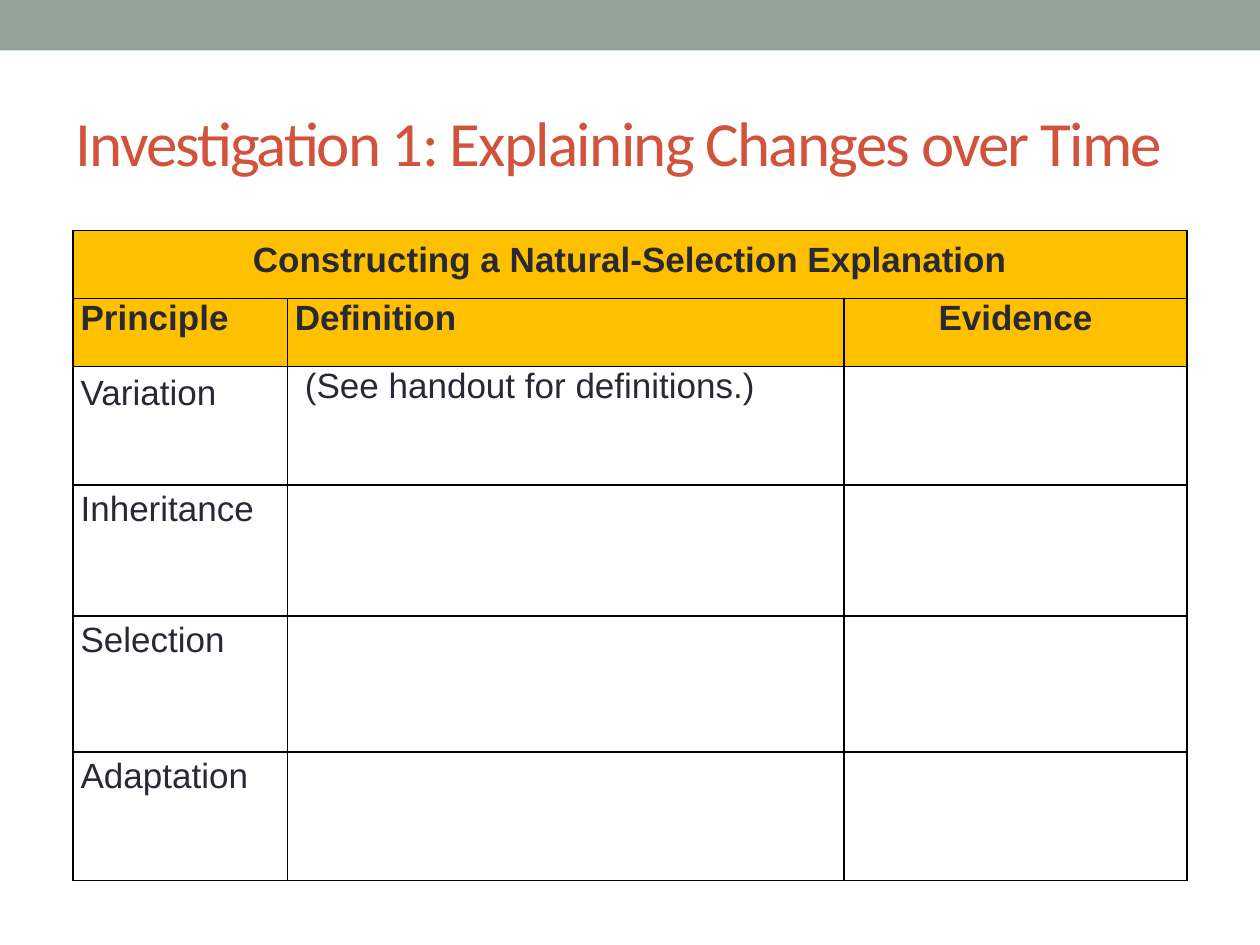
import pptx
import pptx.dml.color
import pptx.enum.shapes
import pptx.enum.text
import pptx.oxml
import pptx.oxml.ns
import pptx.util

Inches = pptx.util.Inches
Pt = pptx.util.Pt
RGBColor = pptx.dml.color.RGBColor
ALIGN = pptx.enum.text.PP_ALIGN
ANCHOR = pptx.enum.text.MSO_ANCHOR

THEME = {
    "band": RGBColor.from_string("93A299"),
    "title": RGBColor.from_string("D2533C"),
    "text": RGBColor.from_string("292934"),
    "header": RGBColor.from_string("FFC000"),
    "body": RGBColor.from_string("FFFFFF"),
    "border": "000000",
    "title_font": "Calibri",
    "table_font": "Arial",
    "title_size": Pt(36),
    "table_size": Pt(20),
}


def set_borders(cell):
    properties = cell._tc.get_or_add_tcPr()
    for position, side in enumerate(("lnL", "lnR", "lnT", "lnB")):
        line = pptx.oxml.parse_xml(
            f'<a:{side} {pptx.oxml.ns.nsdecls("a")} w="{Pt(1)}"><a:solidFill>'
            f'<a:srgbClr val="{THEME["border"]}"/></a:solidFill></a:{side}>'
        )
        properties.insert(position, line)


def set_text(paragraph, text, alignment, **font_values):
    paragraph.alignment = alignment
    run = paragraph.add_run()
    run.text = text
    run.font.color.rgb = font_values.pop("color")
    for name, value in font_values.items():
        setattr(run.font, name, value)
    return run


presentation = pptx.Presentation()
presentation.slide_width = Inches(10)
presentation.slide_height = Inches(7.5)
slide = presentation.slides.add_slide(presentation.slide_layouts[5])

# Title
title = slide.shapes.title
title.left, title.top = Inches(0.5), Inches(0.58)
title.width, title.height = Inches(9), Inches(1.08)
title.text_frame.vertical_anchor = ANCHOR.MIDDLE
title_run = set_text(
    title.text_frame.paragraphs[0],
    "Investigation 1: Explaining Changes over Time",
    ALIGN.LEFT,
    name=THEME["title_font"],
    size=THEME["title_size"],
    color=THEME["title"],
)
title_run._r.get_or_add_rPr().set("spc", "-100")

# Band along the top
band = slide.shapes.add_shape(
    pptx.enum.shapes.MSO_SHAPE.RECTANGLE, 0, 0, Inches(10), Inches(0.4)
)
band.shadow.inherit = False
band.fill.solid()
band.fill.fore_color.rgb = THEME["band"]
band.line.fill.background()

# Table
ROWS = [
    ["Constructing a Natural-Selection Explanation", "", ""],
    ["Principle", "Definition", "Evidence"],
    ["Variation", "(See handout for definitions.)", ""],
    ["Inheritance", "", ""],
    ["Selection", "", ""],
    ["Adaptation", "", ""],
]
COLUMN_WIDTHS = [1.7, 4.42, 2.72]
ROW_HEIGHTS = [0.54, 0.54, 0.94, 1.04, 1.08, 1.02]
FIRST_COLUMN_TOP_MARGINS = [0.08, 0, 0.06, 0.04, 0.04, 0.04]
HEADER_ROWS = 2
CENTERED = {(0, 0), (1, 2)}
INDENTED = (2, 1)

table = slide.shapes.add_table(
    len(ROWS), len(COLUMN_WIDTHS), Inches(0.58), Inches(1.83),
    Inches(sum(COLUMN_WIDTHS)), Inches(sum(ROW_HEIGHTS)),
).table
for column, width in zip(table.columns, COLUMN_WIDTHS):
    column.width = Inches(width)
for row, height in zip(table.rows, ROW_HEIGHTS):
    row.height = Inches(height)
table.cell(0, 0).merge(table.cell(0, len(COLUMN_WIDTHS) - 1))

for row_index, texts in enumerate(ROWS):
    is_header = row_index < HEADER_ROWS
    for column_index, text in enumerate(texts):
        place = (row_index, column_index)
        cell = table.cell(*place)
        top = FIRST_COLUMN_TOP_MARGINS[row_index] if column_index == 0 else 0
        margins = {
            "margin_left": 0.14 if place == INDENTED else 0.06,
            "margin_right": 0.06,
            "margin_top": top,
            "margin_bottom": 0,
        }
        for name, value in margins.items():
            setattr(cell, name, Inches(value))
        cell.fill.solid()
        cell.fill.fore_color.rgb = THEME["header" if is_header else "body"]
        set_borders(cell)
        if text:
            set_text(
                cell.text_frame.paragraphs[0],
                text,
                ALIGN.CENTER if place in CENTERED else ALIGN.LEFT,
                name=THEME["table_font"],
                size=THEME["table_size"],
                bold=is_header,
                color=THEME["text"],
            )

presentation.save("out.pptx")
